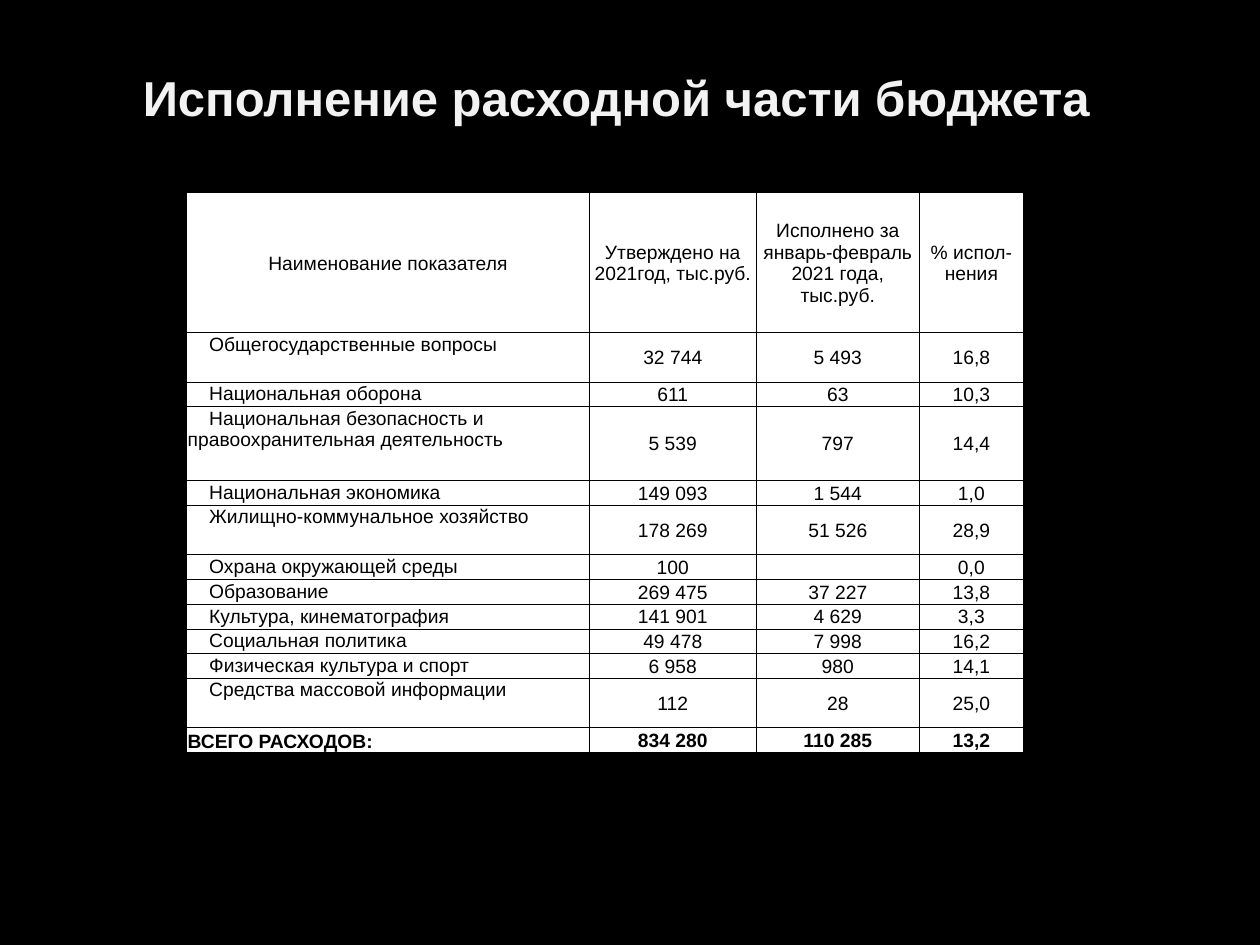
import pptx
import pptx.util
import pptx.dml.color
import pptx.enum.text
import pptx.oxml.ns
from lxml import etree

ALIGN = pptx.enum.text.PP_ALIGN
ANCHOR = pptx.enum.text.MSO_ANCHOR
INCH = pptx.util.Inches
FONT = "Arial"
BLACK, WHITE, PALE = "000000", "FFFFFF", "F2F2F2"
TEXT_SIZE = 11
COLUMN_WIDTHS = [3.2, 1.32, 1.3, 0.82]
HEADER_HEIGHT = 1.11
TABLE_HEIGHT = 4.44

HEADINGS = [
    "Наименование показателя",
    "Утверждено на 2021год, тыс.руб.",
    "Исполнено за январь-февраль 2021 года, тыс.руб.",
    "% испол-нения",
]
EXPENSES = [
    (2, "Общегосударственные вопросы", "32 744", "5 493", "16,8"),
    (1, "Национальная оборона", "611", "63", "10,3"),
    (3, "Национальная безопасность и правоохранительная деятельность", "5 539", "797", "14,4"),
    (1, "Национальная экономика", "149 093", "1 544", "1,0"),
    (2, "Жилищно-коммунальное хозяйство", "178 269", "51 526", "28,9"),
    (1, "Охрана окружающей среды", "100", "", "0,0"),
    (1, "Образование", "269 475", "37 227", "13,8"),
    (1, "Культура, кинематография", "141 901", "4 629", "3,3"),
    (1, "Социальная политика", "49 478", "7 998", "16,2"),
    (1, "Физическая культура и спорт", "6 958", "980", "14,1"),
    (2, "Средства массовой информации", "112", "28", "25,0"),
    (1, "ВСЕГО РАСХОДОВ:", "834 280", "110 285", "13,2"),
]


def color(value):
    return pptx.dml.color.RGBColor.from_string(value)


def paint(fill, value):
    fill.solid()
    fill.fore_color.rgb = color(value)


def add_run(paragraph, text, size, value, bold=False):
    run = paragraph.add_run()
    run.text = text
    run.font.name = FONT
    run.font.size = pptx.util.Pt(size)
    run.font.bold = bold
    run.font.color.rgb = color(value)


def add_child(parent, tag, **attributes):
    return etree.SubElement(parent, pptx.oxml.ns.qn(tag), **attributes)


def draw_borders(cell):
    properties = cell._tc.get_or_add_tcPr()
    for position, side in enumerate(("a:lnL", "a:lnR", "a:lnT", "a:lnB")):
        border = add_child(properties, side, w=str(pptx.util.Pt(0.5)))
        add_child(add_child(border, "a:solidFill"), "a:srgbClr", val=BLACK)
        properties.insert(position, border)


def fill_cell(cell, text, anchor=ANCHOR.MIDDLE, align=ALIGN.CENTER, bold=False, indent=0):
    cell.margin_left = cell.margin_right = cell.margin_top = INCH(0.01)
    cell.margin_bottom = 0
    cell.vertical_anchor = anchor
    paint(cell.fill, WHITE)
    draw_borders(cell)
    paragraph = cell.text_frame.paragraphs[0]
    paragraph.alignment = align
    if indent:
        paragraph._p.get_or_add_pPr().set("indent", str(INCH(indent)))
    if text:
        add_run(paragraph, text, TEXT_SIZE, BLACK, bold)
    else:
        add_child(paragraph._p, "a:endParaRPr", sz=str(TEXT_SIZE * 100))


def place_title(slide, text):
    title = slide.shapes.title
    title.left, title.top, title.width, title.height = map(INCH, (0.5, 0.29, 9, 0.96))
    frame = title.text_frame
    frame.vertical_anchor = ANCHOR.MIDDLE
    frame.margin_right = INCH(0.32)
    heading = frame.paragraphs[0]
    heading.alignment = ALIGN.CENTER
    add_run(heading, text, 28, PALE, True)


def add_budget_table(slide):
    line_height = (TABLE_HEIGHT - HEADER_HEIGHT) / sum(expense[0] for expense in EXPENSES)
    budget = slide.shapes.add_table(
        len(EXPENSES) + 1, len(HEADINGS),
        INCH(1.48), INCH(1.53), INCH(sum(COLUMN_WIDTHS)), INCH(TABLE_HEIGHT),
    ).table
    budget.first_row = budget.horz_banding = False
    for column, width in zip(budget.columns, COLUMN_WIDTHS):
        column.width = INCH(width)
    budget.rows[0].height = INCH(HEADER_HEIGHT)
    for column, heading in enumerate(HEADINGS):
        fill_cell(budget.cell(0, column), heading)
    for row, (lines, indicator, *amounts) in enumerate(EXPENSES, 1):
        budget.rows[row].height = INCH(lines * line_height)
        total = row == len(EXPENSES)
        fill_cell(
            budget.cell(row, 0), indicator,
            anchor=ANCHOR.BOTTOM if total else ANCHOR.TOP,
            align=ALIGN.LEFT, bold=total, indent=0 if total else 0.17,
        )
        for column, amount in enumerate(amounts, 1):
            fill_cell(budget.cell(row, column), amount, bold=total)


def main():
    presentation = pptx.Presentation()
    presentation.slide_width = INCH(10)
    presentation.slide_height = INCH(7.5)
    slide = presentation.slides.add_slide(presentation.slide_layouts[5])
    paint(slide.background.fill, BLACK)
    place_title(slide, "Исполнение расходной части бюджета")
    add_budget_table(slide)
    presentation.save("out.pptx")


if __name__ == "__main__":
    main()
